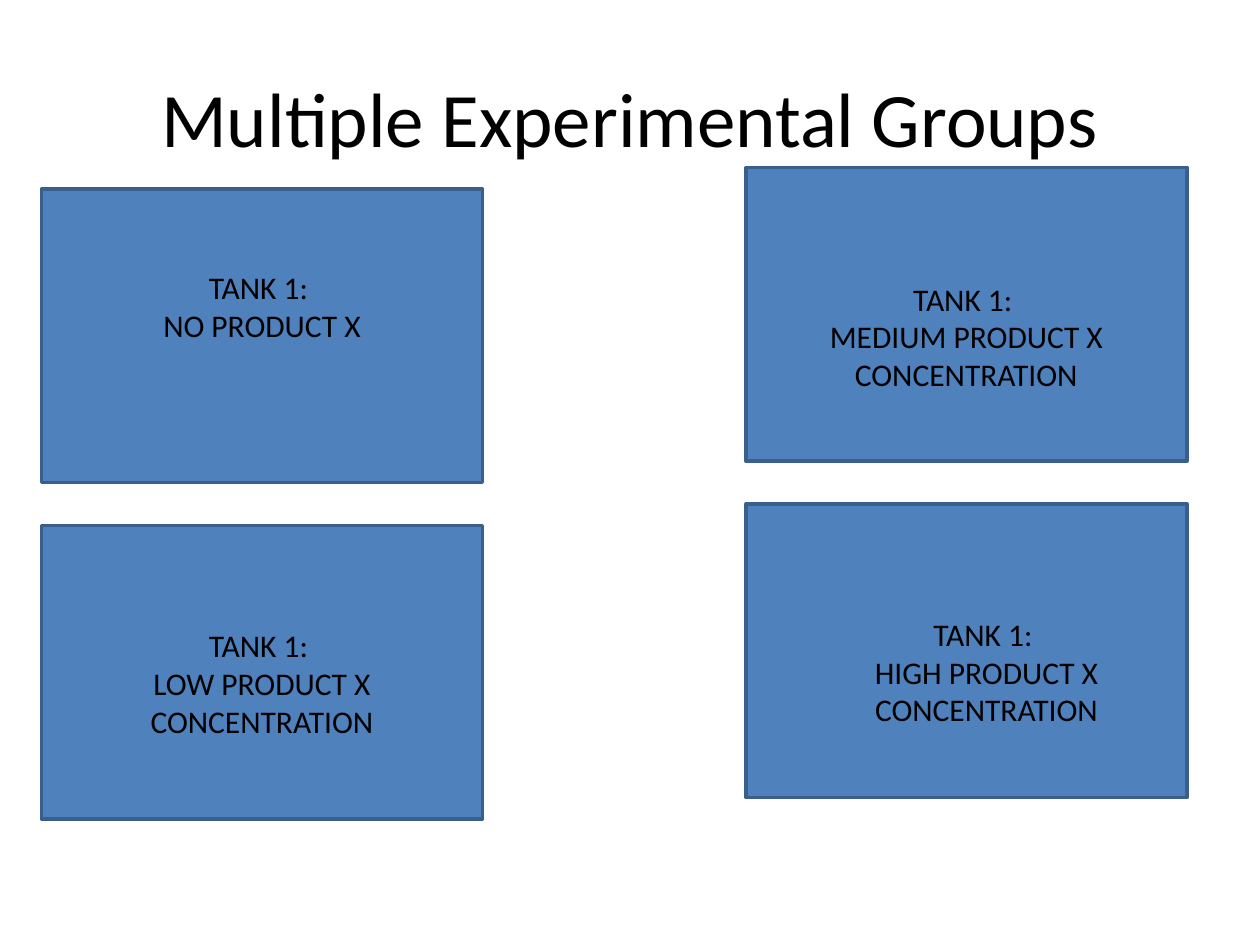
from dataclasses import dataclass

import pptx
import pptx.dml.color
import pptx.enum.shapes
import pptx.enum.text
import pptx.util

Inches = pptx.util.Inches
TANK_WIDTH, TANK_HEIGHT = 3.5, 2.33
LABEL_WIDTH = 2.5
ROW_STEP = 2.67
LEFT_X, LEFT_TOP = 0.33, 1.5
RIGHT_X, RIGHT_TOP = 5.92, 1.33


@dataclass
class Tank:
    left: float
    top: float
    label_left: float
    label_top: float
    label_height: float
    treatment: str


TANKS = [
    Tank(LEFT_X, LEFT_TOP, 0.83, 2.08, 0.71, "NO PRODUCT X"),
    Tank(LEFT_X, LEFT_TOP + ROW_STEP, 0.83, 4.92, 1.01, "LOW PRODUCT X CONCENTRATION"),
    Tank(RIGHT_X, RIGHT_TOP + ROW_STEP, 6.58, 4.83, 1.01, "HIGH PRODUCT X CONCENTRATION"),
    Tank(RIGHT_X, RIGHT_TOP, 6.42, 2.17, 1.01, "MEDIUM PRODUCT X CONCENTRATION"),
]


def color(value: str) -> pptx.dml.color.RGBColor:
    return pptx.dml.color.RGBColor.from_string(value)


def format_text(frame: pptx.text.text.TextFrame, size: float) -> None:
    frame.word_wrap = True
    for para in frame.paragraphs:
        para.alignment = pptx.enum.text.PP_ALIGN.CENTER
        for span in para.runs:
            span.font.name = "Calibri"
            span.font.size = pptx.util.Pt(size)
            span.font.color.rgb = color("000000")


def draw_tank(page: pptx.slide.Slide, tank: Tank) -> None:
    box = page.shapes.add_shape(
        pptx.enum.shapes.MSO_SHAPE.RECTANGLE,
        Inches(tank.left), Inches(tank.top), Inches(TANK_WIDTH), Inches(TANK_HEIGHT),
    )
    box.shadow.inherit = False
    box.fill.solid()
    box.fill.fore_color.rgb = color("4F81BD")
    box.line.color.rgb = color("3A5F8C")
    box.line.width = pptx.util.Pt(2)


def draw_label(page: pptx.slide.Slide, tank: Tank) -> None:
    label = page.shapes.add_textbox(
        Inches(tank.label_left), Inches(tank.label_top),
        Inches(LABEL_WIDTH), Inches(tank.label_height),
    )
    label.text_frame.text = f"TANK 1: \n{tank.treatment}"
    label.text_frame.auto_size = pptx.enum.text.MSO_AUTO_SIZE.SHAPE_TO_FIT_TEXT
    format_text(label.text_frame, 18)


def draw_title(page: pptx.slide.Slide, text: str) -> None:
    title = page.shapes.title
    title.left, title.top = Inches(0.5), Inches(0.3)
    title.width, title.height = Inches(9), Inches(1.25)
    title.text_frame.text = text
    title.text_frame.vertical_anchor = pptx.enum.text.MSO_ANCHOR.MIDDLE
    format_text(title.text_frame, 44)


def main() -> None:
    deck = pptx.Presentation()
    deck.slide_width, deck.slide_height = Inches(10), Inches(7.5)
    page = deck.slides.add_slide(deck.slide_layouts[5])
    draw_title(page, "Multiple Experimental Groups")
    for tank in TANKS:
        draw_tank(page, tank)
    for tank in TANKS:
        draw_label(page, tank)
    deck.save("out.pptx")


if __name__ == "__main__":
    main()
